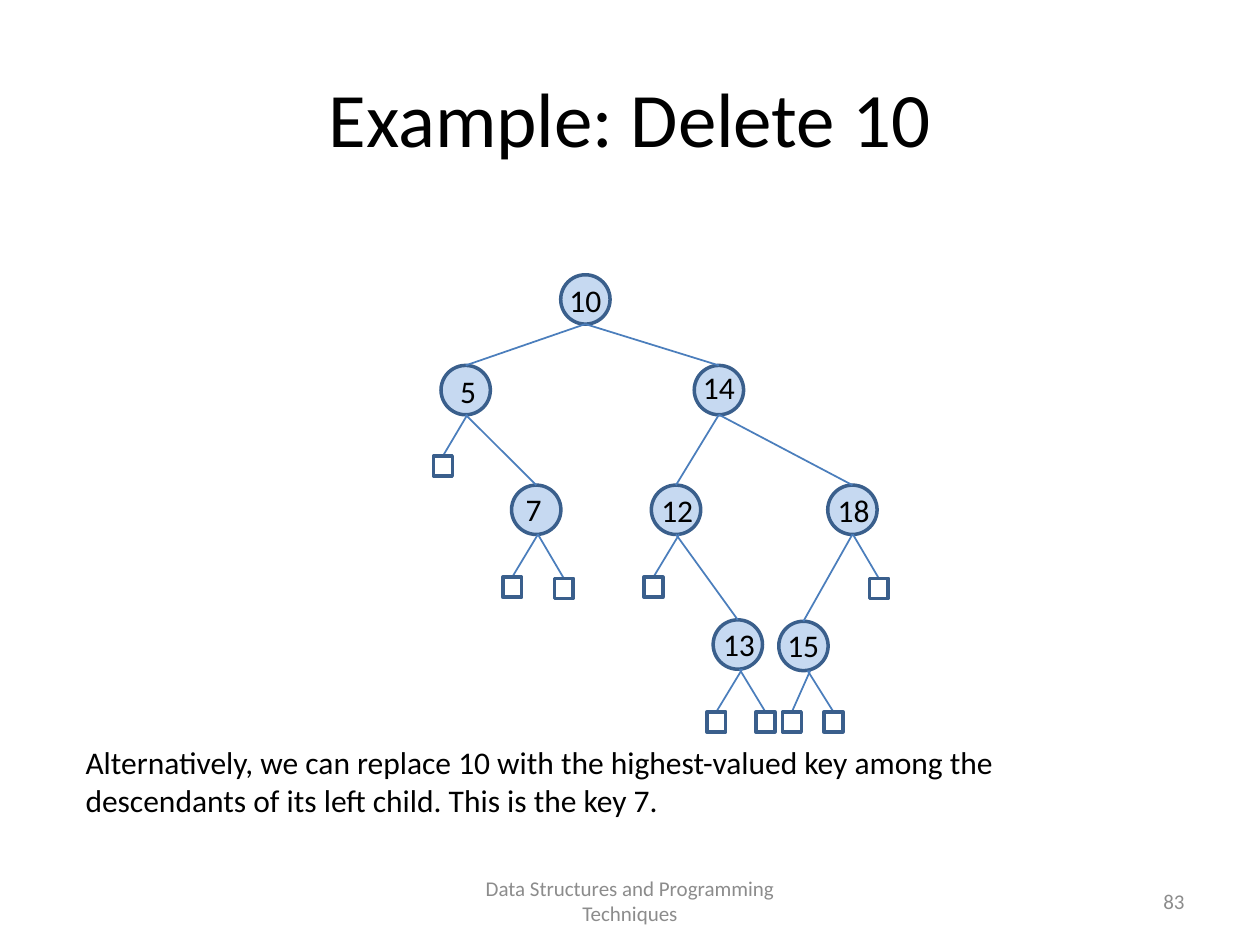
"""Build a slide showing a binary search tree before key 10 is deleted."""
from typing import NamedTuple

import pptx
import pptx.dml.color
import pptx.enum.shapes
import pptx.enum.text
import pptx.oxml
import pptx.oxml.ns
import pptx.util

Pt = pptx.util.Pt
ALIGN = pptx.enum.text.PP_ALIGN
ANCHOR = pptx.enum.text.MSO_ANCHOR
SHAPE = pptx.enum.shapes.MSO_SHAPE

FONT = "Calibri"
COLORS = {"text": "000000", "footer": "8C8C8C", "node": "C6D9F1",
          "outline": "3A5F8C", "edge": "4B7EBC"}
NODE_SIZE = 28.2
LEAF_WIDTH, LEAF_HEIGHT = 10.8, 11.5
KEY_WIDTH, KEY_HEIGHT = 38.2, 28.8


class Node(NamedTuple):
    """A keyed tree node with its corner and the corner of its key text."""
    left: float
    top: float
    key_left: float
    key_top: float
    parent: str = ""

    @property
    def center(self) -> float:
        return self.left + NODE_SIZE / 2

    @property
    def bottom(self) -> float:
        return self.top + NODE_SIZE


class Leaf(NamedTuple):
    """An empty external node with the x where its edge leaves the parent."""
    parent: str
    stem: float
    left: float
    top: float


class Caption(NamedTuple):
    """A block of text with its box and formatting."""
    text: str
    left: float
    top: float
    width: float
    height: float
    size: float = 18
    color: str = "text"
    align: ALIGN = ALIGN.CENTER
    anchor: ANCHOR = ANCHOR.TOP


NODES = {
    "10": Node(320.4, 157, 315.4, 157),
    "5": Node(252, 208.8, 248.4, 208.8, "10"),
    "14": Node(396.7, 208.8, 391.7, 206.6, "10"),
    "7": Node(292.3, 277.2, 285.8, 276.5, "5"),
    "12": Node(372.2, 277.2, 367.9, 277.2, "14"),
    "18": Node(473, 277.2, 468.7, 277.2, "14"),
    "13": Node(407.5, 354.2, 403.2, 353.5, "12"),
    "15": Node(445, 355, 439.9, 354.2, "18"),
}

LEAVES = [
    Leaf("5", 267.1, 247.7, 260.6),
    Leaf("7", 307.4, 287.3, 329.8),
    Leaf("7", 307.4, 316.8, 330.5),
    Leaf("12", 388.1, 368, 329.8),
    Leaf("18", 487.4, 496.8, 330.5),
    Leaf("13", 424.1, 403.9, 406.8),
    Leaf("13", 422.6, 432, 406.8),
    Leaf("15", 463, 447.1, 406.8),
    Leaf("15", 461.5, 470.9, 406.8),
]

CAPTIONS = [
    Caption("Alternatively, we can replace 10 with the highest-valued key among "
            "the descendants of its left child. This is the key 7.",
            41.8, 421.2, 623.5, 51.1, align=ALIGN.LEFT),
    Caption("Data Structures and Programming Techniques",
            246, 500.5, 228, 28.75, 12, "footer", anchor=ANCHOR.MIDDLE),
    Caption("83", 516, 500.5, 168, 28.75, 12, "footer", ALIGN.RIGHT, ANCHOR.MIDDLE),
]


def rgb(name: str) -> pptx.dml.color.RGBColor:
    """Look up a named colour."""
    return pptx.dml.color.RGBColor.from_string(COLORS[name])


def format_text(frame, text: str, size: float, color: str, align: ALIGN) -> None:
    """Fill a text frame with one formatted paragraph."""
    frame.text = text
    paragraph = frame.paragraphs[0]
    paragraph.alignment = align
    paragraph.font.name = FONT
    paragraph.font.size = Pt(size)
    paragraph.font.color.rgb = rgb(color)


def draw_caption(slide, caption: Caption) -> None:
    """Draw a wrapped text box."""
    box = slide.shapes.add_textbox(Pt(caption.left), Pt(caption.top),
                                   Pt(caption.width), Pt(caption.height))
    frame = box.text_frame
    frame.word_wrap = True
    frame.vertical_anchor = caption.anchor
    format_text(frame, caption.text, caption.size, caption.color, caption.align)


def draw_edge(slide, x1: float, y1: float, x2: float, y2: float) -> None:
    """Draw a thin straight tree edge."""
    edge = slide.shapes.add_connector(pptx.enum.shapes.MSO_CONNECTOR.STRAIGHT,
                                      Pt(x1), Pt(y1), Pt(x2), Pt(y2))
    edge.line.color.rgb = rgb("edge")
    edge.line.width = Pt(1)
    properties = edge._element.spPr
    properties.append(pptx.oxml.parse_xml(
        f"<a:effectLst {pptx.oxml.ns.nsdecls('a')}/>"))


def draw_outline(slide, kind: SHAPE, left: float, top: float,
                 width: float, height: float, fill: str = "") -> None:
    """Draw an outlined tree vertex, filled if a colour is named."""
    vertex = slide.shapes.add_shape(kind, Pt(left), Pt(top), Pt(width), Pt(height))
    vertex.shadow.inherit = False
    vertex.line.color.rgb = rgb("outline")
    vertex.line.width = Pt(2)
    if fill:
        vertex.fill.solid()
        vertex.fill.fore_color.rgb = rgb(fill)
    else:
        vertex.fill.background()


def draw_tree(slide) -> None:
    """Draw all nodes, edges, keys and leaves."""
    for node in NODES.values():
        draw_outline(slide, SHAPE.OVAL, node.left, node.top,
                     NODE_SIZE, NODE_SIZE, "node")
    for key, node in NODES.items():
        if node.parent:
            parent = NODES[node.parent]
            draw_edge(slide, parent.center, parent.bottom, node.center, node.top)
        draw_caption(slide, Caption(key, node.key_left, node.key_top,
                                    KEY_WIDTH, KEY_HEIGHT))
    for leaf in LEAVES:
        draw_edge(slide, leaf.stem, NODES[leaf.parent].bottom,
                  leaf.left + LEAF_WIDTH / 2, leaf.top)
        draw_outline(slide, SHAPE.RECTANGLE, leaf.left, leaf.top,
                     LEAF_WIDTH, LEAF_HEIGHT)


def main() -> None:
    """Build and save the slide."""
    presentation = pptx.Presentation()
    presentation.slide_width, presentation.slide_height = Pt(720), Pt(540)
    slide = presentation.slides.add_slide(presentation.slide_layouts[5])
    title = slide.shapes.title
    title.left, title.top, title.width, title.height = Pt(36), Pt(21.6), Pt(648), Pt(90)
    title.text_frame.vertical_anchor = ANCHOR.MIDDLE
    format_text(title.text_frame, "Example: Delete 10", 44, "text", ALIGN.CENTER)
    draw_tree(slide)
    for caption in CAPTIONS:
        draw_caption(slide, caption)
    presentation.save("out.pptx")


if __name__ == "__main__":
    main()
